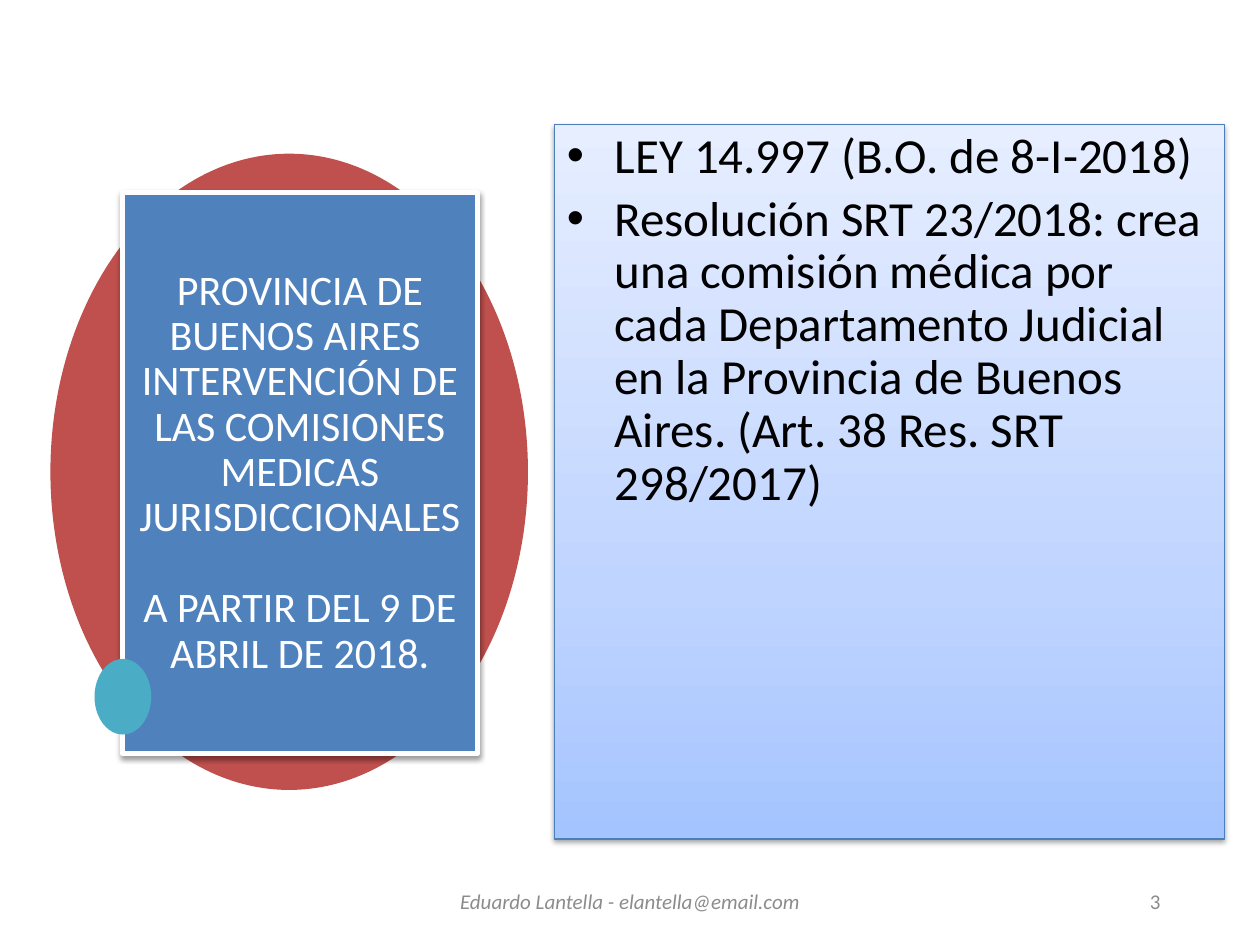
from copy import deepcopy

from lxml.etree import SubElement
from pptx import Presentation
from pptx.dml.color import RGBColor
from pptx.enum.shapes import MSO_SHAPE as Shape
from pptx.enum.text import MSO_ANCHOR as Anchor, MSO_AUTO_SIZE as AutoSize, PP_ALIGN as Align
from pptx.oxml.ns import qn
from pptx.util import Inches, Pt

colour = RGBColor.from_string

deck = Presentation()
deck.slide_width, deck.slide_height = Inches(10), Inches(7.5)
page = deck.slides.add_slide(deck.slide_layouts[5])


def share(left, top, width, height):
    """Turn percentages of the slide's size into lengths."""
    across, down = deck.slide_width / 100, deck.slide_height / 100
    return [round(v) for v in (left * across, top * down, width * across, height * down)]


def write(shape, texts, anchor, font, layout):
    """Fill a shape with one paragraph per text, all formatted alike."""
    frame = shape.text_frame
    frame.word_wrap = True
    frame.auto_size = AutoSize.NONE
    frame.vertical_anchor = anchor
    for number, text in enumerate(texts):
        para = frame.paragraphs[0] if number == 0 else frame.add_paragraph()
        para.text = text
        for key, value in layout.items():
            setattr(para, key, value)
        for span in para.runs:
            span.font.name = "Calibri"
            span.font.color.rgb = colour(font["colour"])
            span.font.size = Pt(font["size"])
            span.font.italic = font.get("italic", False)


# Ellipses behind and in front of the title
title = page.shapes.title
ovals = []
for place, tint in (((4, 16.27, 37.9, 67.33), "C0504D"), ((7.5, 69.73, 4.5, 8), "4BACC6")):
    oval = page.shapes.add_shape(Shape.OVAL, *share(*place))
    oval.shadow.inherit = False
    oval.fill.solid()
    oval.fill.fore_color.rgb = colour(tint)
    oval.line.fill.background()
    ovals.append(oval)
ovals[0]._element.addnext(title._element)

# Title card
title.left, title.top, title.width, title.height = share(9.7, 20.4, 28.2, 59.33)
title.fill.solid()
title.fill.fore_color.rgb = colour("4F81BD")
title.line.color.rgb = colour("FFFFFF")
title.line.width = Pt(3)
write(
    title,
    ["PROVINCIA DE BUENOS AIRES \vINTERVENCIÓN DE LAS COMISIONES MEDICAS JURISDICCIONALES",
     "A PARTIR DEL 9 DE ABRIL DE 2018."],
    Anchor.MIDDLE,
    {"size": 24, "colour": "FFFFFF"},
    {"alignment": Align.CENTER, "line_spacing": 0.9},
)
title.text_frame.paragraphs[1].space_before = Pt(26)

# Panel with the rules in force
panel = page.shapes.add_shape(Shape.RECTANGLE, *share(44, 13.2, 53.2, 75.6))
panel.fill.gradient()
panel.fill.gradient_angle = 90
stop_list = panel._element.spPr.find(qn("a:gradFill")).find(qn("a:gsLst"))
stop_list.append(deepcopy(stop_list[-1]))
stops = ((0, "A4C4FF"), (0.35, "BFD4FF"), (1, "E6EEFF"))
for stop, (position, tint) in zip(panel.fill.gradient_stops, stops):
    stop.position = position
    stop.color.rgb = colour(tint)
panel.line.color.rgb = colour("4B7EBC")
panel.line.width = Pt(0.75)
write(
    panel,
    ["LEY 14.997 (B.O. de 8-I-2018)",
     "Resolución SRT 23/2018: crea una comisión médica por cada Departamento Judicial "
     "en la Provincia de Buenos Aires. (Art. 38 Res. SRT 298/2017)"],
    Anchor.TOP,
    {"size": 28, "colour": "000000"},
    {"alignment": Align.LEFT, "line_spacing": 0.9, "space_before": Pt(5.6)},
)
for para in panel.text_frame.paragraphs:
    props = para._p.get_or_add_pPr()
    props.set("marL", str(Inches(0.38)))
    props.set("indent", str(-Inches(0.38)))
    SubElement(props, qn("a:buFont"), typeface="Arial")
    SubElement(props, qn("a:buChar"), char="•")

# Soft shadow under both cards
for card in (title, panel):
    card.shadow.inherit = False
    effects = card._element.spPr.find(qn("a:effectLst"))
    shadow = SubElement(effects, qn("a:outerShdw"), blurRad=str(Pt(3.1)),
                        dist=str(Pt(1.6)), dir="5400000", rotWithShape="0")
    tint = SubElement(shadow, qn("a:srgbClr"), val="000000")
    SubElement(tint, qn("a:alpha"), val="38000")

# Footer and page number
for left, width, text, align, italic in (
    (33.1, 33.8, "Eduardo Lantella - elantella@email.com", Align.CENTER, True),
    (70.6, 22.5, "3", Align.RIGHT, False),
):
    box = page.shapes.add_textbox(*share(left, 92.67, width, 5.33))
    write(box, [text], Anchor.MIDDLE,
          {"size": 12, "colour": "8C8C8C", "italic": italic},
          {"alignment": align, "space_after": Pt(6)})

deck.save("out.pptx")
